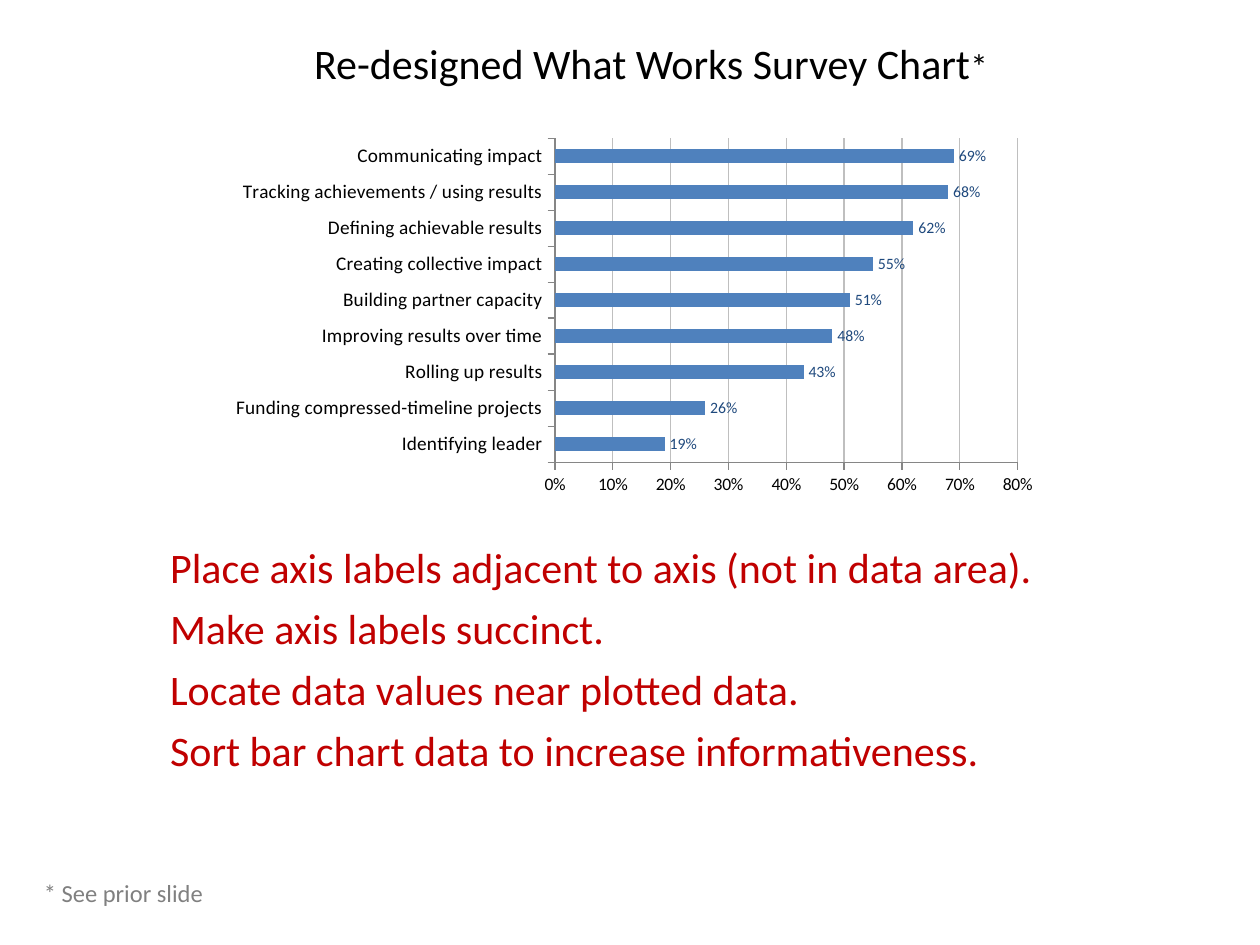
from lxml import etree
from pptx import Presentation
from pptx.chart.data import CategoryChartData
from pptx.dml.color import RGBColor
from pptx.enum.chart import XL_CHART_TYPE, XL_LABEL_POSITION, XL_TICK_MARK
from pptx.enum.text import MSO_ANCHOR, MSO_AUTO_SIZE, PP_ALIGN
from pptx.oxml.ns import qn
from pptx.util import Pt

BAR = XL_CHART_TYPE.BAR_CLUSTERED
OUTSIDE_END = XL_LABEL_POSITION.OUTSIDE_END
TICK_OUT = XL_TICK_MARK.OUTSIDE
TOP = MSO_ANCHOR.TOP
NO_FIT = MSO_AUTO_SIZE.NONE
LEFT, CENTER = PP_ALIGN.LEFT, PP_ALIGN.CENTER

BLACK = RGBColor(0x00, 0x00, 0x00)
GRAY = RGBColor(0x80, 0x80, 0x80)
AXIS_GRAY = RGBColor(0x86, 0x86, 0x86)
GRID_GRAY = RGBColor(0xBF, 0xBF, 0xBF)
RED = RGBColor(0xC0, 0x00, 0x00)
BLUE = RGBColor(0x4F, 0x81, 0xBD)
NAVY = RGBColor(0x1F, 0x49, 0x7D)

TITLE = [("Re-designed What Works Survey Chart", 24), ("*", 20)]
ADVICE = [
    "Place axis labels adjacent to axis (not in data area).",
    "Make axis labels succinct.",
    "Locate data values near plotted data.",
    "Sort bar chart data to increase informativeness.",
]
# Bars run from the bottom of the chart upwards
SURVEY = [
    ("Identifying leader", 0.19),
    ("Funding compressed-timeline projects", 0.26),
    ("Rolling up results", 0.43),
    ("Improving results over time", 0.48),
    ("Building partner capacity", 0.51),
    ("Creating collective impact", 0.55),
    ("Defining achievable results", 0.62),
    ("Tracking achievements / using results", 0.68),
    ("Communicating impact", 0.69),
]
PLOT_AREA = {"x": 0.418, "y": 0.134, "w": 0.544, "h": 0.671}


class SlideBuilder:
    """Holds the style and the current slide."""

    font_name = "Calibri"

    def __init__(self, slide):
        self.slide = slide

    def style_font(self, font, size, color):
        font.name = self.font_name
        font.size = Pt(size)
        font.bold = False
        font.color.rgb = color

    def fill_text(self, box, bounds, paragraphs, color, align=LEFT, space_after=0):
        """Place a text shape and write its paragraphs of (text, size) spans."""
        box.left, box.top, box.width, box.height = map(Pt, bounds)
        frame = box.text_frame
        frame.word_wrap = True
        frame.auto_size = NO_FIT
        frame.vertical_anchor = TOP
        for index, spans in enumerate(paragraphs):
            para = frame.add_paragraph() if index else frame.paragraphs[0]
            para.alignment = align
            para.space_before = Pt(0)
            para.space_after = Pt(space_after)
            for text, size in spans:
                span = para.add_run()
                span.text = text
                self.style_font(span.font, size, color)

    def title(self, bounds, spans):
        self.fill_text(self.slide.shapes.title, bounds, [spans], BLACK, CENTER)

    def advice_list(self, bounds, lines, size):
        body = self.slide.placeholders[1]
        paragraphs = [[(line, size)] for line in lines]
        self.fill_text(body, bounds, paragraphs, RED, space_after=6)
        # Plain lines: no bullet and no hanging indent
        for para in body.text_frame.paragraphs:
            properties = para._p.get_or_add_pPr()
            properties.set("marL", "0")
            properties.set("indent", "0")
            etree.SubElement(properties, qn("a:buNone"))

    def footnote(self, bounds, text, size):
        box = self.slide.shapes.add_textbox(*map(Pt, bounds))
        self.fill_text(box, bounds, [[(text, size)]], GRAY)

    def bar_chart(self, bounds, rows):
        data = CategoryChartData(number_format="0%")
        data.categories = [name for name, _ in rows]
        data.add_series("Series 1", [value for _, value in rows])
        chart = self.slide.shapes.add_chart(BAR, *map(Pt, bounds), data).chart
        chart.has_title = False
        chart.has_legend = False
        self.style_font(chart.font, 10, BLACK)
        self.style_axes(chart)

        # Bars and their values
        plot = chart.plots[0]
        plot.gap_width = 150
        plot.vary_by_categories = False
        bars = plot.series[0]
        bars.format.fill.solid()
        bars.format.fill.fore_color.rgb = BLUE
        labels = bars.data_labels
        labels.show_value = True
        labels.position = OUTSIDE_END
        labels.number_format = "0%"
        labels.number_format_is_linked = False
        self.style_font(labels.font, 9, NAVY)
        self.fix_plot_area(chart)

    def style_axes(self, chart):
        for axis, size in ((chart.category_axis, 11), (chart.value_axis, 10)):
            axis.major_tick_mark = TICK_OUT
            axis.format.line.color.rgb = AXIS_GRAY
            axis.format.line.width = Pt(0.75)
            self.style_font(axis.tick_labels.font, size, BLACK)
        chart.category_axis.has_major_gridlines = False
        scale = chart.value_axis
        scale.minimum_scale, scale.maximum_scale, scale.major_unit = 0, 0.8, 0.1
        scale.tick_labels.number_format = "0%"
        scale.tick_labels.number_format_is_linked = False
        scale.has_major_gridlines = True
        scale.major_gridlines.format.line.color.rgb = GRID_GRAY
        scale.major_gridlines.format.line.width = Pt(0.75)

    def fix_plot_area(self, chart):
        """Set the inner plot area as fractions of the chart."""
        area = chart._chartSpace.find(".//" + qn("c:plotArea"))
        for old_layout in area.findall(qn("c:layout")):
            area.remove(old_layout)
        layout = etree.Element(qn("c:layout"))
        area.insert(0, layout)
        manual = etree.SubElement(layout, qn("c:manualLayout"))
        settings = {"layoutTarget": "inner", "xMode": "edge", "yMode": "edge"}
        for tag, value in {**settings, **PLOT_AREA}.items():
            etree.SubElement(manual, qn("c:" + tag), val=str(value))


def main():
    deck = Presentation()
    deck.slide_width, deck.slide_height = Pt(720), Pt(540)
    builder = SlideBuilder(deck.slides.add_slide(deck.slide_layouts[1]))

    builder.bar_chart((114, 42, 486, 276), SURVEY)
    builder.advice_list((90, 306, 564, 142), ADVICE, 24)
    builder.title((132, 18, 480, 36), TITLE)
    builder.footnote((18, 498, 540, 24), "* See prior slide", 14)

    deck.save("out.pptx")


if __name__ == "__main__":
    main()
